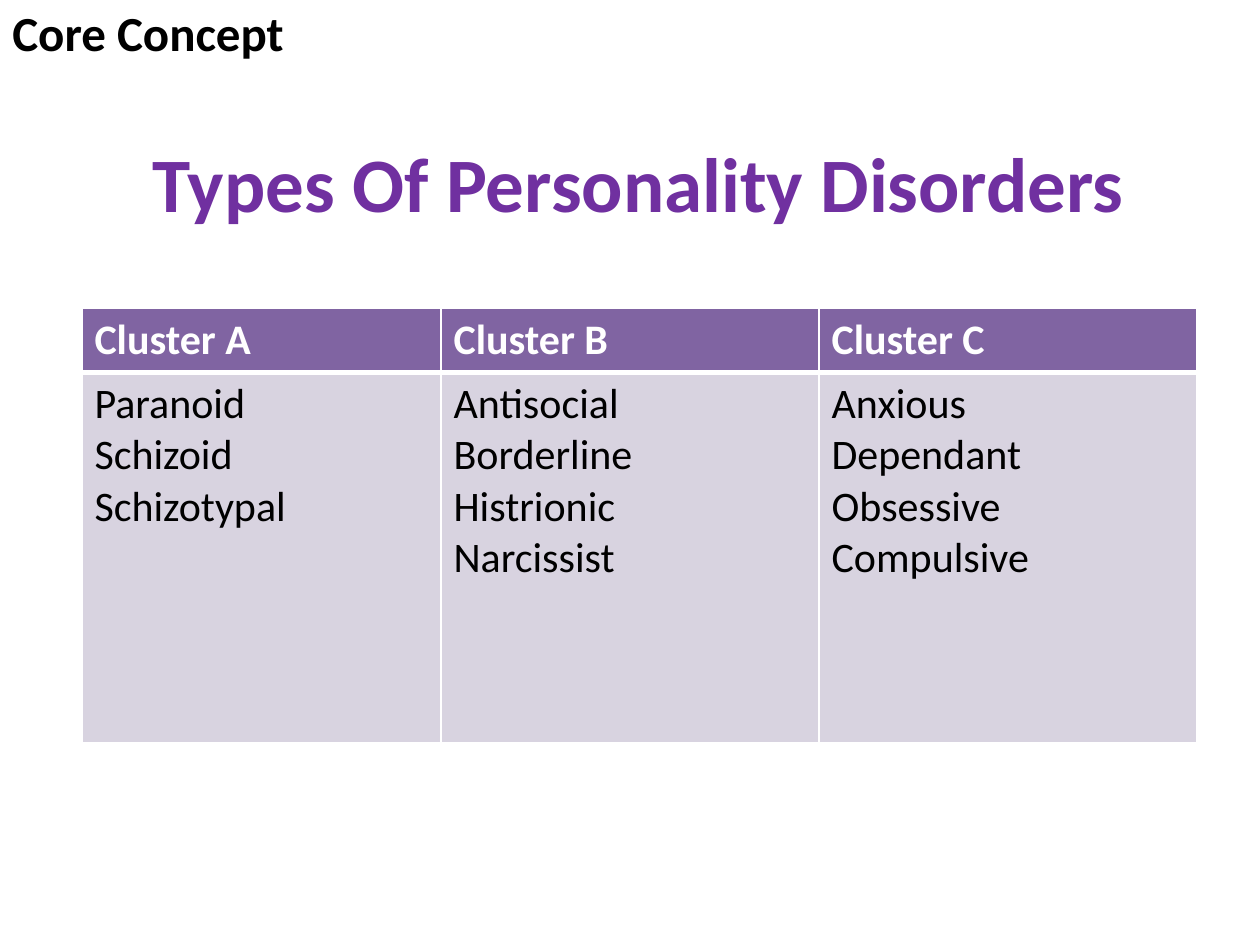
import pptx
import pptx.util
import pptx.dml.color
import pptx.enum.text
import pptx.oxml
import pptx.oxml.ns

Pt = pptx.util.Pt
ALIGN = pptx.enum.text.PP_ALIGN
ANCHOR = pptx.enum.text.MSO_ANCHOR


def color(value):
    return pptx.dml.color.RGBColor.from_string(value)


class SlideBuilder:
    font = "Calibri"
    purple = "7030A0"
    header_fill = "8064A2"
    body_fill = "D8D3E0"
    white = "FFFFFF"
    black = "000000"

    def __init__(self, slide):
        self.slide = slide

    def format_text(self, text_frame, size, fill, bold, align=ALIGN.LEFT):
        for paragraph in text_frame.paragraphs:
            paragraph.alignment = align
            for run in paragraph.runs:
                run.font.name = self.font
                run.font.size = Pt(size)
                run.font.bold = bold
                run.font.color.rgb = color(fill)

    def text(self, text, left, top, width, height, size, fill, align=ALIGN.LEFT, anchor=ANCHOR.TOP):
        shape = self.slide.shapes.add_textbox(Pt(left), Pt(top), Pt(width), Pt(height))
        text_frame = shape.text_frame
        text_frame.word_wrap = True
        text_frame.vertical_anchor = anchor
        text_frame.text = text
        self.format_text(text_frame, size, fill, True, align)

    def borders(self, cell, widths):
        properties = cell._tc.get_or_add_tcPr()
        namespace = pptx.oxml.ns.nsdecls("a")
        for index, (side, width) in enumerate(widths.items()):
            line = pptx.oxml.parse_xml(
                f'<a:{side} {namespace} w="{Pt(width)}"><a:solidFill>'
                f'<a:srgbClr val="{self.white}"/></a:solidFill></a:{side}>'
            )
            properties.insert(index, line)

    def table(self, rows, left, top, column_widths, row_heights, size):
        frame = self.slide.shapes.add_table(
            len(rows), len(column_widths), Pt(left), Pt(top),
            Pt(sum(column_widths)), Pt(sum(row_heights)),
        )
        table = frame.table
        for column, width in zip(table.columns, column_widths):
            column.width = Pt(width)
        for row_index, (row, height) in enumerate(zip(rows, row_heights)):
            header = row_index == 0
            table.rows[row_index].height = Pt(height)
            for column_index, text in enumerate(row):
                cell = table.cell(row_index, column_index)
                cell.text_frame.text = text
                self.format_text(cell.text_frame, size, self.white if header else self.black, header)
                cell.fill.solid()
                cell.fill.fore_color.rgb = color(self.header_fill if header else self.body_fill)
                self.borders(cell, {
                    "lnL": 1, "lnR": 1,
                    "lnT": 1 if header else 3, "lnB": 3 if header else 1,
                })


def main():
    presentation = pptx.Presentation()
    presentation.slide_width = Pt(720)
    presentation.slide_height = Pt(540)
    builder = SlideBuilder(presentation.slides.add_slide(presentation.slide_layouts[6]))

    builder.text("Types Of Personality Disorders", 41, 59, 648, 90, 44, builder.purple,
                 ALIGN.CENTER, ANCHOR.MIDDLE)
    clusters = {
        "Cluster A": ["Paranoid", "Schizoid", "Schizotypal"],
        "Cluster B": ["Antisocial", "Borderline", "Histrionic", "Narcissist"],
        "Cluster C": ["Anxious", "Dependant", "Obsessive Compulsive"],
    }
    rows = [list(clusters), ["\n".join(disorders) for disorders in clusters.values()]]
    builder.table(rows, 46.8, 176.4, [205.2, 216, 216], [36.5, 211.5], 24)
    builder.text("Core Concept", 0, -2, 288, 41, 28, builder.black)

    presentation.save("out.pptx")


if __name__ == "__main__":
    main()
